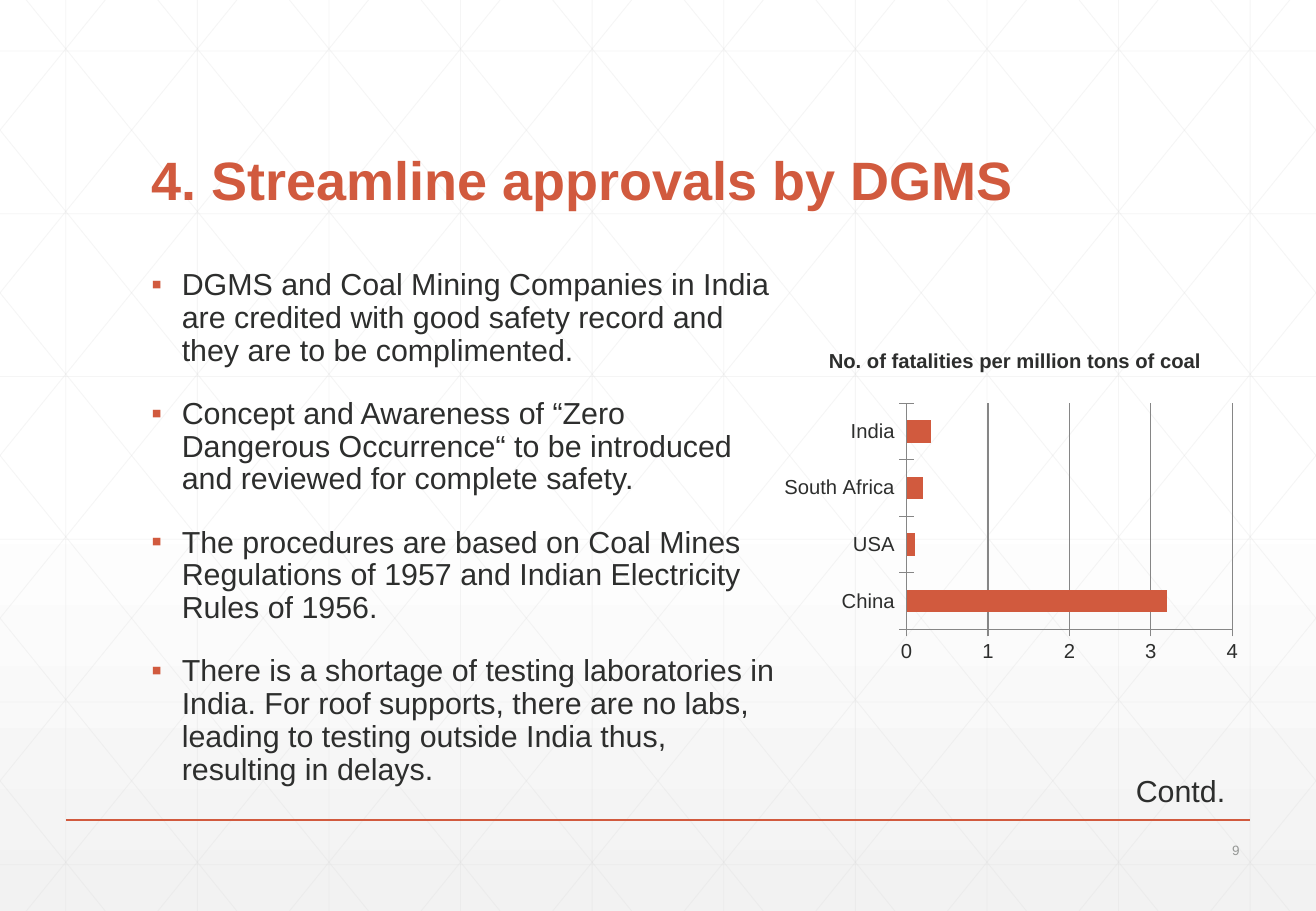
from dataclasses import dataclass

from lxml import etree
from pptx import Presentation
from pptx import util as u
from pptx.chart import data as chart_data
from pptx.dml.color import RGBColor
from pptx.enum import chart as chart_enum
from pptx.enum import shapes, text
from pptx.oxml.ns import qn

WIDTH = u.Inches(10.83)
HEIGHT = u.Inches(7.5)
FONT = "Arial"
ACCENT = RGBColor(0xD1, 0x5A, 0x3E)
INK = RGBColor(0x2D, 0x2E, 0x2D)
MUTED = RGBColor(0x95, 0x97, 0x95)
MESH = RGBColor(0xD9, 0xD9, 0xD9)
AXIS = RGBColor(0x86, 0x86, 0x86)
WHITE = RGBColor(0xFF, 0xFF, 0xFF)
PALE = RGBColor(0xF2, 0xF2, 0xF2)

COLUMN = 0.1
ROW = 1.34 / 7.5
DIAGONAL_RUN = 0.56
DIAGONAL_START = 0.02


@dataclass(frozen=True)
class Box:
    left: float
    top: float
    width: float
    height: float

    def lengths(self) -> tuple[int, int, int, int]:
        return (int(self.left * WIDTH), int(self.top * HEIGHT),
                int(self.width * WIDTH), int(self.height * HEIGHT))


@dataclass(frozen=True)
class Line:
    x1: float
    y1: float
    x2: float
    y2: float
    color: RGBColor = MESH
    weight: float = 0.5
    opacity: int = 25


@dataclass(frozen=True)
class TextBlock:
    box: Box
    paragraphs: tuple[str, ...]
    size: float
    color: RGBColor = INK
    bold: bool = False
    bulleted: bool = False
    line_spacing: float = 1.0
    align: text.PP_ALIGN = text.PP_ALIGN.LEFT
    anchor: text.MSO_ANCHOR = text.MSO_ANCHOR.TOP


BLOCKS = (
    TextBlock(Box(0.106, 0.073, 0.788, 0.167), ("4. Streamline approvals by DGMS",),
              32, ACCENT, bold=True, line_spacing=0.9, anchor=text.MSO_ANCHOR.BOTTOM),
    TextBlock(Box(0.106, 0.289, 0.493, 0.556), (
        "DGMS and Coal Mining Companies in India are credited with good safety record "
        "and they are to be complimented.",
        "Concept and Awareness of “Zero Dangerous Occurrence“ to be introduced and "
        "reviewed for complete safety.",
        "The procedures are based on Coal Mines Regulations of 1957 and Indian "
        "Electricity Rules of 1956.",
        "There is a shortage of testing laboratories in India. For roof supports, there "
        "are no labs, leading to testing outside India thus, resulting in delays.",
    ), 18, bulleted=True, line_spacing=0.9),
    TextBlock(Box(0.854, 0.841, 0.093, 0.053), ("Contd.",), 18),
    TextBlock(Box(0.875, 0.917, 0.076, 0.032), ("9",), 8, MUTED,
              align=text.PP_ALIGN.RIGHT, anchor=text.MSO_ANCHOR.MIDDLE),
)
CHART_BOX = Box(0.587, 0.36, 0.364, 0.376)
CHART_TITLE = "No. of fatalities per million tons of coal"
FATALITIES = {"China": 3.2, "USA": 0.1, "South Africa": 0.2, "India": 0.3}


def mesh_lines() -> list[Line]:
    lines = [Line(x, 0, x, 1) for x in (COLUMN * (k + 0.5) for k in range(10))]
    lines += [Line(0, y, 1, y) for y in (0.056 + ROW * k for k in range(6))]
    for k in range(-5, 10):
        start = DIAGONAL_START + COLUMN * k
        x1, x2 = max(start, 0), min(start + DIAGONAL_RUN, 1)
        y1, y2 = (x1 - start) / DIAGONAL_RUN, (x2 - start) / DIAGONAL_RUN
        lines += [Line(x1, y1, x2, y2), Line(1 - x1, y1, 1 - x2, y2)]
    return lines


def draw_line(slide, line: Line) -> None:
    connector = slide.shapes.add_connector(
        shapes.MSO_CONNECTOR.STRAIGHT,
        int(line.x1 * WIDTH), int(line.y1 * HEIGHT),
        int(line.x2 * WIDTH), int(line.y2 * HEIGHT))
    connector.line.color.rgb = line.color
    connector.line.width = u.Pt(line.weight)
    properties = connector._element.spPr
    if line.opacity < 100:
        color = properties.find(".//" + qn("a:srgbClr"))
        etree.SubElement(color, qn("a:alpha"), val=str(line.opacity * 1000))
    etree.SubElement(properties, qn("a:effectLst"))


def add_bullet(paragraph) -> None:
    properties = paragraph._p.get_or_add_pPr()
    properties.set("marL", str(u.Inches(0.25)))
    properties.set("indent", str(-u.Inches(0.25)))
    color = etree.SubElement(properties, qn("a:buClr"))
    etree.SubElement(color, qn("a:srgbClr"), val=str(ACCENT))
    etree.SubElement(properties, qn("a:buFont"), typeface=FONT)
    etree.SubElement(properties, qn("a:buChar"), char="▪")


def style_font(font, size: float, color: RGBColor, bold: bool = False) -> None:
    font.name = FONT
    font.size = u.Pt(size)
    font.bold = bold
    font.color.rgb = color


def draw_text(slide, block: TextBlock) -> None:
    frame = slide.shapes.add_textbox(*block.box.lengths()).text_frame
    frame.word_wrap = True
    frame.vertical_anchor = block.anchor
    frame.text = "\n".join(block.paragraphs)
    for paragraph in frame.paragraphs:
        if block.bulleted:
            add_bullet(paragraph)
            paragraph.space_before = u.Pt(18)
        paragraph.line_spacing = block.line_spacing
        paragraph.alignment = block.align
        style_font(paragraph.font, block.size, block.color, block.bold)


def set_layout(element, position: int, **shares: float) -> None:
    for existing in element.findall(qn("c:layout")):
        element.remove(existing)
    layout = etree.Element(qn("c:layout"))
    element.insert(position, layout)
    manual = etree.SubElement(layout, qn("c:manualLayout"))
    if "w" in shares:
        etree.SubElement(manual, qn("c:layoutTarget"), val="inner")
    for mode in ("xMode", "yMode"):
        etree.SubElement(manual, qn("c:" + mode), val="edge")
    for name, share in shares.items():
        etree.SubElement(manual, qn("c:" + name), val=str(share))


def draw_chart(slide) -> None:
    data = chart_data.CategoryChartData()
    data.categories = list(FATALITIES)
    data.add_series(CHART_TITLE, list(FATALITIES.values()))
    chart = slide.shapes.add_chart(
        chart_enum.XL_CHART_TYPE.BAR_CLUSTERED, *CHART_BOX.lengths(), data).chart
    style_font(chart.font, 12, INK)
    chart.has_legend = False
    chart.has_title = True
    title = chart.chart_title
    title.text_frame.text = CHART_TITLE
    style_font(title.text_frame.paragraphs[0].font, 12, INK, bold=True)
    title.include_in_layout = False
    set_layout(title._element, 1, x=0.11, y=0.05)
    set_layout(chart._chartSpace.chart.plotArea, 0, x=0.28, y=0.22, w=0.68, h=0.66)

    plot = chart.plots[0]
    plot.vary_by_categories = False
    plot.gap_width = 150
    fill = plot.series[0].format.fill
    fill.solid()
    fill.fore_color.rgb = ACCENT

    values = chart.value_axis
    values.minimum_scale, values.maximum_scale, values.major_unit = 0, 4, 1
    values.has_major_gridlines = True
    for axis in (values, chart.category_axis):
        axis.major_tick_mark = chart_enum.XL_TICK_MARK.CROSS
        axis.minor_tick_mark = chart_enum.XL_TICK_MARK.NONE
    for part in (values, chart.category_axis, values.major_gridlines):
        part.format.line.color.rgb = AXIS
        part.format.line.width = u.Pt(0.75)


def main() -> None:
    presentation = Presentation()
    presentation.slide_width, presentation.slide_height = WIDTH, HEIGHT
    slide = presentation.slides.add_slide(presentation.slide_layouts[6])
    fill = slide.background.fill
    fill.gradient()
    fill.gradient_angle = 270
    for stop, color, position in zip(fill.gradient_stops, (WHITE, PALE), (0.53, 1)):
        stop.color.rgb = color
        stop.position = position
    for line in mesh_lines():
        draw_line(slide, line)
    draw_line(slide, Line(0.05, 0.9, 0.95, 0.9, ACCENT, 1, 100))
    for block in BLOCKS:
        draw_text(slide, block)
    draw_chart(slide)
    presentation.save("out.pptx")


if __name__ == "__main__":
    main()
